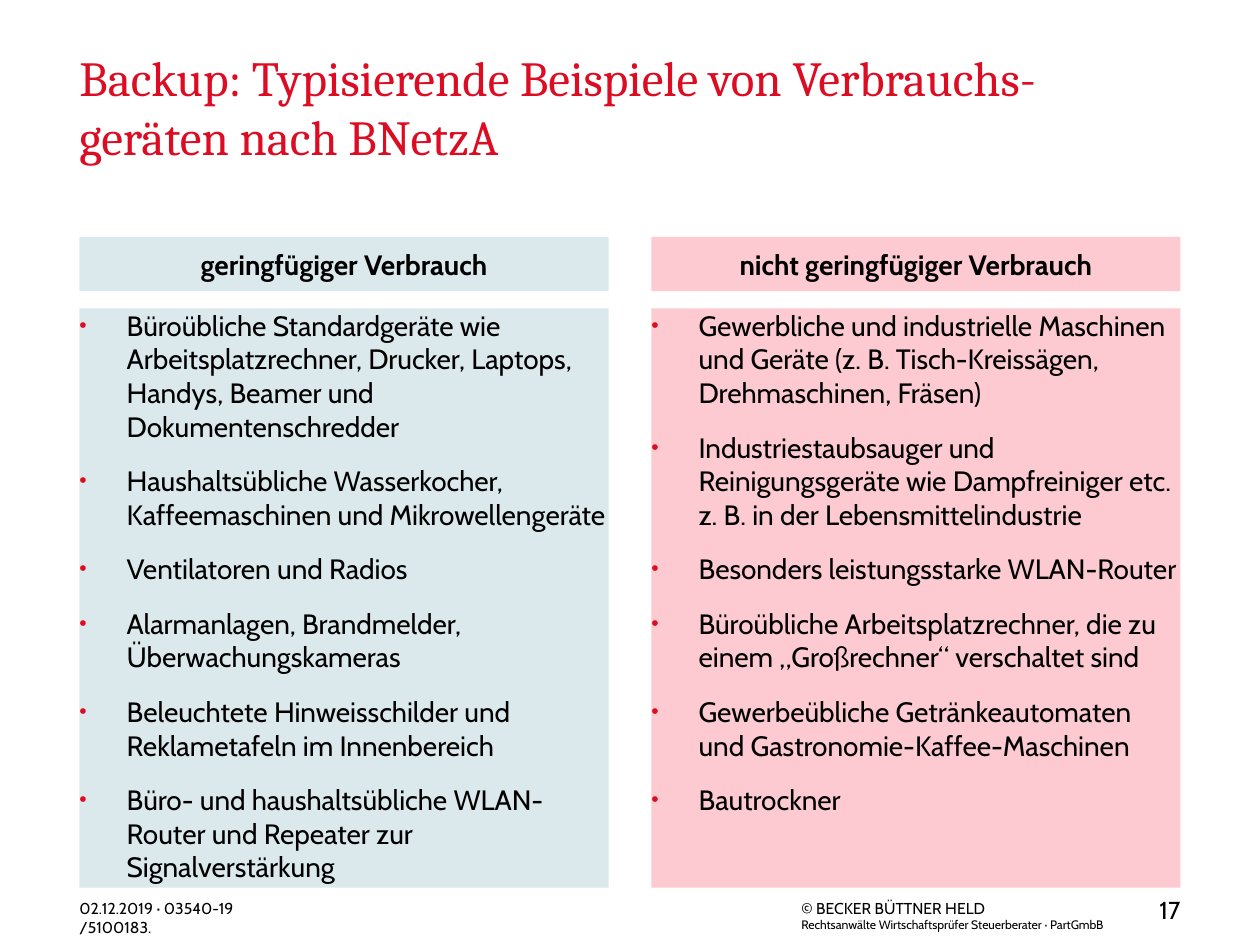
import dataclasses

import lxml.etree
import pptx
import pptx.dml.color
import pptx.enum.text
import pptx.oxml.ns
import pptx.util

Pt = pptx.util.Pt
Align = pptx.enum.text.PP_ALIGN
Anchor = pptx.enum.text.MSO_ANCHOR


@dataclasses.dataclass(frozen=True)
class Theme:
    red: str = "DC0C23"
    black: str = "000000"
    blue_panel: str = "DBE9ED"
    pink_panel: str = "FCCAD0"
    heading_font: str = "Cambria"
    text_font: str = "Cabin"
    title_size: float = 28
    text_size: float = 16
    number_size: float = 14
    footer_size: float = 9
    small_size: float = 7


theme = Theme()


def place(box, left, top, width, height, anchor=Anchor.TOP):
    box.left, box.top, box.width, box.height = Pt(left), Pt(top), Pt(width), Pt(height)
    frame = box.text_frame
    frame.margin_left = frame.margin_top = frame.margin_right = frame.margin_bottom = 0
    frame.word_wrap = True
    frame.auto_size = pptx.enum.text.MSO_AUTO_SIZE.NONE
    frame.vertical_anchor = anchor
    return frame


def write(para, text, size, color=theme.black, font=theme.text_font, bold=False, align=Align.LEFT):
    para.alignment = align
    para.space_before = Pt(0)
    for index, line in enumerate(text.split("\n")):
        if index:
            para.add_line_break()
        span = para.add_run()
        span.text = line
        span.font.size = Pt(size)
        span.font.name = font
        span.font.bold = bold
        span.font.color.rgb = pptx.dml.color.RGBColor.from_string(color)


columns = [
    (45.4, theme.blue_panel, "geringfügiger Verbrauch", [
        "Büroübliche Standardgeräte wie Arbeitsplatzrechner, Drucker, Laptops, Handys, Beamer und Dokumentenschredder",
        "Haushaltsübliche Wasserkocher, Kaffeemaschinen und Mikrowellengeräte",
        "Ventilatoren und Radios",
        "Alarmanlagen, Brandmelder, Überwachungskameras",
        "Beleuchtete Hinweisschilder und Reklametafeln im Innenbereich",
        "Büro- und haushaltsübliche WLAN-Router und Repeater zur Signalverstärkung",
    ]),
    (372.2, theme.pink_panel, "nicht geringfügiger Verbrauch", [
        "Gewerbliche und industrielle Maschinen und Geräte (z. B. Tisch-Kreissägen, Drehmaschinen, Fräsen)",
        "Industriestaubsauger und Reinigungsgeräte wie Dampfreiniger etc. z. B. in der Lebensmittelindustrie",
        "Besonders leistungsstarke WLAN-Router",
        "Büroübliche Arbeitsplatzrechner, die zu einem „Großrechner“ verschaltet sind",
        "Gewerbeübliche Getränkeautomaten\nund Gastronomie-Kaffee-Maschinen",
        "Bautrockner",
    ]),
]
column_width = 302.4

footers = [
    (646.6, 511.2, 28, 17.3, Align.RIGHT, [("17", theme.number_size)]),
    (45.4, 513.4, 120.2, 22, Align.LEFT, [("02.12.2019 · 03540-19 /5100183.", theme.footer_size)]),
    (457.9, 513.4, 194.4, 22, Align.LEFT, [
        ("© BECKER BÜTTNER HELD", theme.footer_size),
        ("Rechtsanwälte Wirtschaftsprüfer Steuerberater · PartGmbB", theme.small_size),
    ]),
]

deck = pptx.Presentation()
deck.slide_width, deck.slide_height = Pt(720), Pt(540)
page = deck.slides.add_slide(deck.slide_layouts.get_by_name("Comparison"))

title = place(page.shapes.title, 45.4, 19.4, 591.8, 74.9, Anchor.BOTTOM)
write(title.paragraphs[0], "Backup: Typisierende Beispiele von Verbrauchs-geräten nach BNetzA",
      theme.title_size, theme.red, theme.heading_font)

for column, (left, panel_color, heading, examples) in enumerate(columns):
    heading_box = page.placeholders[1 + 2 * column]
    list_box = page.placeholders[2 + 2 * column]
    for box in (heading_box, list_box):
        box.fill.solid()
        box.fill.fore_color.rgb = pptx.dml.color.RGBColor.from_string(panel_color)

    frame = place(heading_box, left, 135.4, column_width, 31, Anchor.MIDDLE)
    write(frame.paragraphs[0], heading, theme.text_size, bold=True, align=Align.CENTER)

    frame = place(list_box, left, 176.2, column_width, 331)
    for index, example in enumerate(examples):
        para = frame.add_paragraph() if index else frame.paragraphs[0]
        properties = para._p.get_or_add_pPr()
        properties.set("marL", str(Pt(27)))
        properties.set("indent", str(-Pt(27)))
        bullet_color = lxml.etree.SubElement(properties, pptx.oxml.ns.qn("a:buClr"))
        lxml.etree.SubElement(bullet_color, pptx.oxml.ns.qn("a:srgbClr"), val=theme.red)
        lxml.etree.SubElement(properties, pptx.oxml.ns.qn("a:buSzPct"), val="75000")
        lxml.etree.SubElement(properties, pptx.oxml.ns.qn("a:buChar"), char="•")
        write(para, example, theme.text_size)
        para.space_after = Pt(12)

for left, top, width, height, align, lines in footers:
    frame = place(page.shapes.add_textbox(0, 0, 0, 0), left, top, width, height)
    for index, (text, size) in enumerate(lines):
        para = frame.add_paragraph() if index else frame.paragraphs[0]
        write(para, text, size, align=align)

deck.save("out.pptx")
